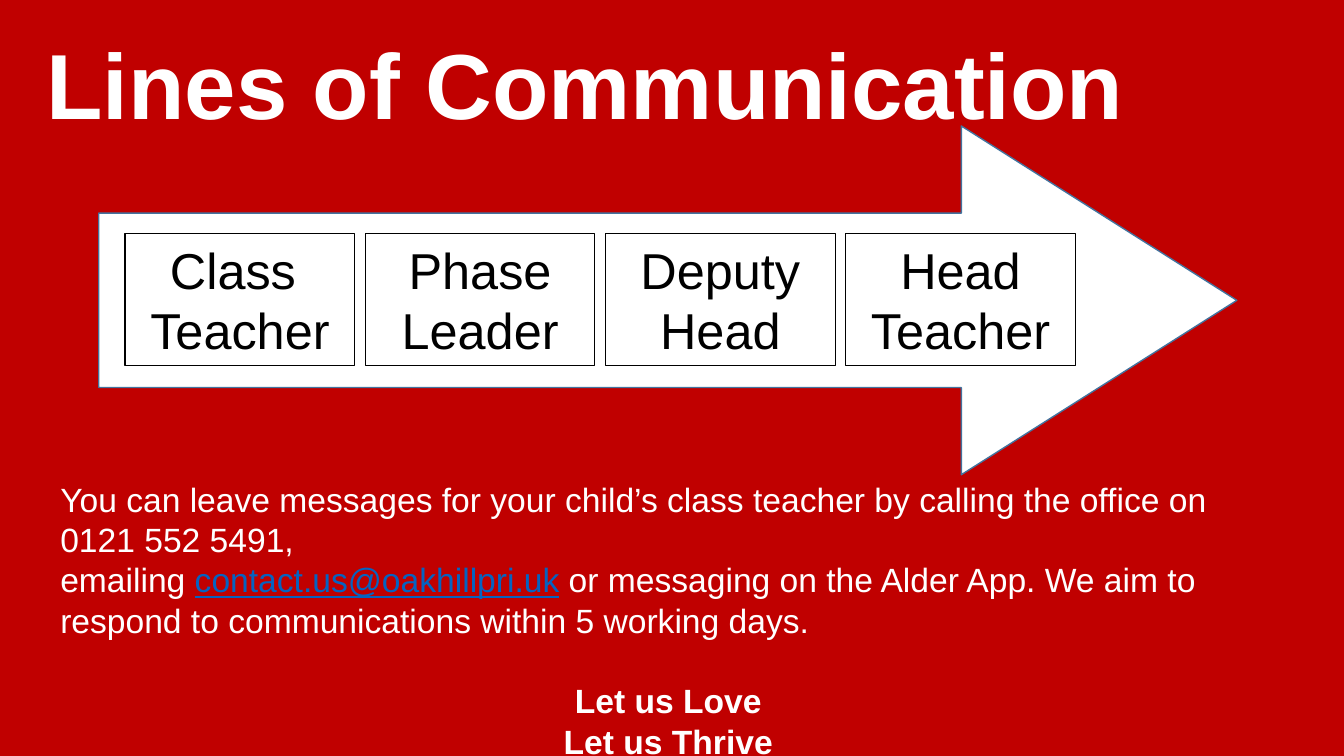
"""Build the Lines of Communication slide."""
import dataclasses
import typing

import pptx
import pptx.dml.color
import pptx.enum.shapes
import pptx.enum.text
import pptx.util

CELL = pptx.util.Inches(0.1)
COLS, ROWS = 133.33, 75
FONT = "Arial"
HUES = {
    "red": "C00000",
    "white": "FFFFFF",
    "black": "000000",
    "blue": "43739E",
    "link": "0563C1",
}
ALIGN = pptx.enum.text.PP_ALIGN
SHAPE = pptx.enum.shapes.MSO_SHAPE
FIT = pptx.enum.text.MSO_AUTO_SIZE
MID = pptx.enum.text.MSO_ANCHOR.MIDDLE


@dataclasses.dataclass(frozen=True)
class Area:
    col: float
    row: float
    wide: float
    high: float

    def frame(self) -> typing.Tuple[int, ...]:
        sides = (self.col, self.row, self.wide, self.high)
        return tuple(round(side * CELL) for side in sides)


@dataclasses.dataclass(frozen=True)
class Run:
    text: str
    hue: str = "white"
    size: int = 24
    bold: bool = False
    under: bool = False


Lines = typing.List[typing.List[Run]]

TITLE = Area(3.6, 1.6, 115, 14.5)
ARROW = Area(9.8, 12.5, 112.9, 34.6)
MOTTO = Area(43.8, 69.5, 45, 4)
NOTE = Area(5, 47, 123.3, 13.1)
FIRST = Area(12.4, 23.2, 22.8, 13.1)
STEP = 23.83
ROLES = [["Class ", "Teacher"], ["Phase Leader"], ["Deputy Head"], ["Head Teacher"]]

HEADING = [[Run("Lines of Communication", size=66, bold=True)]]
CREED = [[Run(text, bold=True)] for text in ("Let us Love", "Let us Thrive")]
ADVICE = [
    [Run("You can leave messages for your child’s class teacher by calling "
         "the office on 0121 552 5491,")],
    [
        Run("emailing "),
        Run("contact.us@oakhillpri.uk", "link", under=True),
        Run(" or messaging on the Alder App. We aim to respond to "
            "communications within 5 working days."),
    ],
]


def tint(name: str) -> pptx.dml.color.RGBColor:
    return pptx.dml.color.RGBColor.from_string(HUES[name])


def place(shape: typing.Any, area: Area) -> None:
    shape.left, shape.top, shape.width, shape.height = area.frame()


def write(shape: typing.Any, lines: Lines, align: ALIGN, space: float = 1) -> None:
    frame = shape.text_frame
    frame.word_wrap = True
    for index, line in enumerate(lines):
        para = frame.add_paragraph() if index else frame.paragraphs[0]
        para.alignment = align
        para.line_spacing = space
        for item in line:
            run = para.add_run()
            run.text = item.text
            font = run.font
            font.name = FONT
            font.size = pptx.util.Pt(item.size)
            font.bold = item.bold
            font.underline = item.under
            font.color.rgb = tint(item.hue)


def draw(slide: typing.Any, kind: SHAPE, area: Area, hue: str, width: float) -> typing.Any:
    shape = slide.shapes.add_shape(kind, *area.frame())
    shape.shadow.inherit = False
    shape.line.color.rgb = tint(hue)
    shape.line.width = pptx.util.Pt(width)
    return shape


def main() -> None:
    deck = pptx.Presentation()
    deck.slide_width = round(COLS * CELL)
    deck.slide_height = ROWS * CELL
    slide = deck.slides.add_slide(deck.slide_layouts[5])
    slide.background.fill.solid()
    slide.background.fill.fore_color.rgb = tint("red")

    title = slide.shapes.title
    place(title, TITLE)
    title.text_frame.auto_size = FIT.NONE
    title.text_frame.vertical_anchor = MID
    write(title, HEADING, ALIGN.LEFT, 0.9)

    motto = slide.shapes.add_textbox(*MOTTO.frame())
    motto.text_frame.vertical_anchor = MID
    write(motto, CREED, ALIGN.CENTER)

    arrow = draw(slide, SHAPE.RIGHT_ARROW, ARROW, "blue", 1)
    arrow.adjustments[0] = 0.5
    arrow.adjustments[1] = 0.79
    arrow.fill.solid()
    arrow.fill.fore_color.rgb = tint("white")

    for index, role in enumerate(ROLES):
        area = dataclasses.replace(FIRST, col=FIRST.col + index * STEP)
        box = draw(slide, SHAPE.RECTANGLE, area, "black", 0.75)
        box.fill.background()
        box.text_frame.auto_size = FIT.SHAPE_TO_FIT_TEXT
        box.text_frame.vertical_anchor = pptx.enum.text.MSO_ANCHOR.TOP
        write(box, [[Run(text, "black", 36)] for text in role], ALIGN.CENTER)

    note = slide.shapes.add_textbox(*NOTE.frame())
    note.text_frame.auto_size = FIT.SHAPE_TO_FIT_TEXT
    write(note, ADVICE, ALIGN.LEFT)

    deck.save("out.pptx")


if __name__ == "__main__":
    main()
